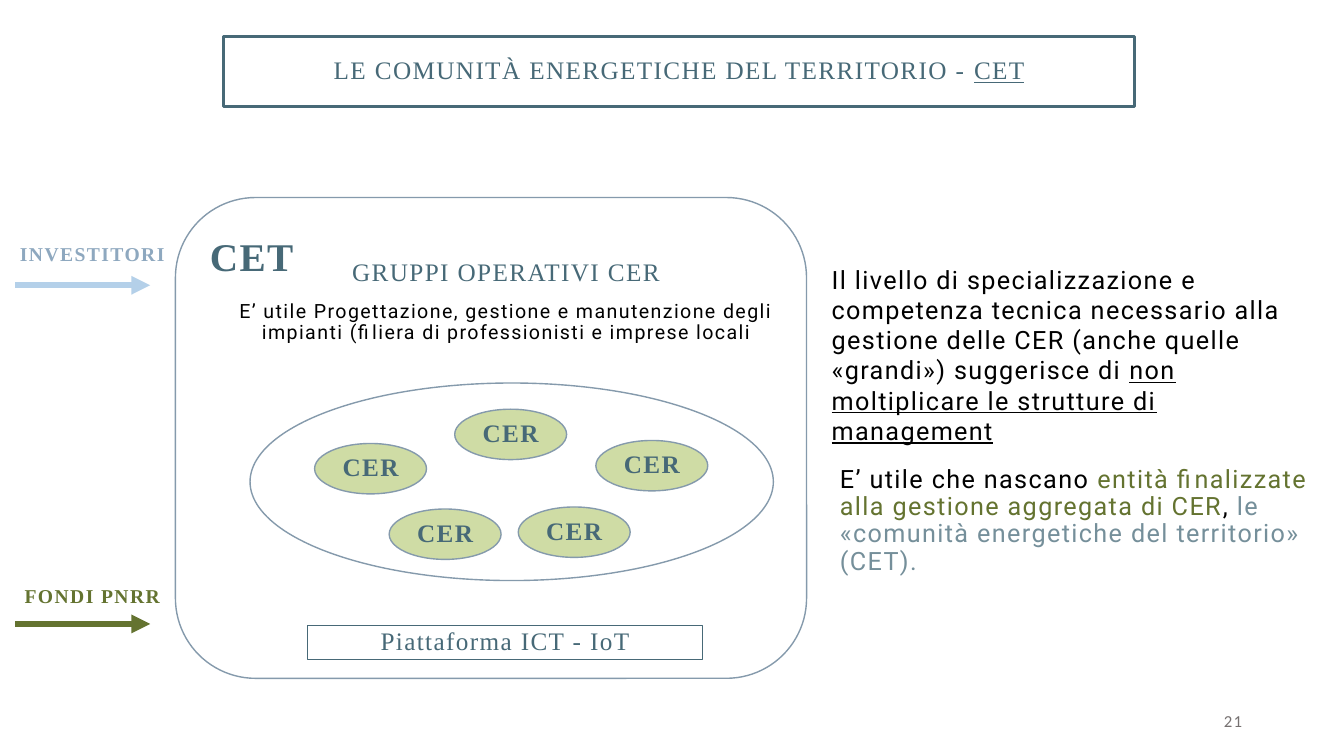
"""Build the slide on territorial energy communities (CET)."""
from lxml import etree
from pptx import Presentation
from pptx.dml.color import RGBColor
from pptx.enum import shapes as kinds, text as txt
from pptx.oxml import ns
from pptx.util import Inches, Pt

SERIF, SANS = "Times New Roman", "Roboto"
TEAL, OLIVE, BLACK, OUTLINE = "476977", "647330", "000000", "859AAC"
MIDDLE, BOTTOM, TOP = (txt.MSO_ANCHOR.MIDDLE, txt.MSO_ANCHOR.BOTTOM,
                       txt.MSO_ANCHOR.TOP)
LEFT, CENTER, RIGHT = txt.PP_ALIGN.LEFT, txt.PP_ALIGN.CENTER, txt.PP_ALIGN.RIGHT
OVAL = kinds.MSO_SHAPE.OVAL

TITLE = [("LE COMUNITÀ ENERGETICHE DEL TERRITORIO - ", TEAL, False),
         ("CET", TEAL, True)]
PROPOSAL = [("E’ utile che nascano ", BLACK, False),
            ("entità finalizzate alla gestione aggregata di CER", OLIVE, False),
            (", ", BLACK, False),
            ("le «comunità energetiche del territorio» (CET).", "758F9A", False)]
REASON = [("Il livello di specializzazione e competenza tecnica necessario alla "
           "gestione delle CER (anche quelle «grandi») suggerisce di ", BLACK, False),
          ("non moltiplicare le strutture di management", BLACK, True)]
INVESTORS = [("INVESTITORI", "8EA8BF", False)]
FUNDS = [("FONDI PNRR", OLIVE, False)]
COMMUNITY = [("CET", TEAL, False)]
GROUPS = [("GRUPPI OPERATIVI CER", TEAL, False)]
SERVICES = [("E’ utile Progettazione, gestione e manutenzione degli impianti "
             "(filiera di professionisti e imprese locali", BLACK, False)]
PLATFORM = [("Piattaforma ICT - IoT", TEAL, False)]
MEMBER = [("CER", TEAL, False)]
PAGE = [("21", "767171", False)]
FLOWS = [(2.83, "B4D0E9"), (6.19, OLIVE)]
MEMBER_SPOTS = [(5.91, 4.37), (4.51, 4.06), (3.12, 4.4), (3.86, 5.05), (5.14, 5.03)]

deck = Presentation()
deck.slide_width, deck.slide_height = Inches(13.33), Inches(7.5)
slide = deck.slides.add_slide(deck.slide_layouts[3])


def color(value):
    return RGBColor.from_string(value)


def place(holder, *box):
    holder.left, holder.top, holder.width, holder.height = map(Inches, box)
    return holder


def textbox(*box):
    return slide.shapes.add_textbox(*map(Inches, box))


def outlined(kind, box, line, weight, fill=None):
    shape = slide.shapes.add_shape(kind, *map(Inches, box))
    shape.shadow.inherit = False
    if fill:
        shape.fill.solid()
        shape.fill.fore_color.rgb = color(fill)
    else:
        shape.fill.background()
    shape.line.color.rgb = color(line)
    shape.line.width = Pt(weight)
    return shape


def write(holder, runs, size, font=SERIF, align=CENTER, anchor=MIDDLE,
          spacing=0.9, bold=False, before=0):
    frame = holder.text_frame
    frame.word_wrap = True
    frame.auto_size = txt.MSO_AUTO_SIZE.NONE
    frame.vertical_anchor = anchor
    paragraph = frame.add_paragraph() if frame.text else frame.paragraphs[0]
    paragraph.alignment = align
    paragraph.line_spacing = spacing
    paragraph.space_before = Pt(before)
    if holder.is_placeholder:
        props = paragraph._p.get_or_add_pPr()
        props.set("marL", "0")
        props.set("indent", "0")
        etree.SubElement(props, ns.qn("a:buNone"))
    for words, ink, underlined in runs:
        run = paragraph.add_run()
        run.text = words
        run.font.name, run.font.size = font, Pt(size)
        run.font.bold, run.font.underline = bold, underlined
        run.font.color.rgb = color(ink)
        run._r.get_or_add_rPr().set("spc", "100")


def arrow(y, ink):
    flow = slide.shapes.add_connector(kinds.MSO_CONNECTOR.STRAIGHT, Inches(0.15),
                                      Inches(y), Inches(1.49), Inches(y))
    flow.line.color.rgb = color(ink)
    flow.line.width = Pt(4.5)
    etree.SubElement(flow.line._get_or_add_ln(), ns.qn("a:tailEnd"), type="triangle")
    etree.SubElement(flow._element.spPr, ns.qn("a:effectLst"))


title = place(slide.shapes.title, 2.22, 0.36, 9.03, 0.7)
title.line.color.rgb = color(TEAL)
title.line.width = Pt(2.25)
write(title, TITLE, 18)
write(place(slide.placeholders[1], 8.23, 4.66, 4.99, 1.1), PROPOSAL, 18, SANS,
      LEFT, BOTTOM)
write(place(slide.placeholders[2], -0.16, 2.22, 2.15, 0.63), INVESTORS, 14, bold=True)
write(textbox(-0.16, 5.67, 2.15, 0.5), FUNDS, 14, bold=True)
write(textbox(8.15, 2.57, 4.87, 1.62), REASON, 18, SANS, LEFT, TOP, 1.0)
write(textbox(9.42, 6.95, 3, 0.4), PAGE, 12, "Calibri", RIGHT, spacing=1.0)
for flow_y, flow_ink in FLOWS:
    arrow(flow_y, flow_ink)

outlined(kinds.MSO_SHAPE.ROUNDED_RECTANGLE, (1.74, 1.96, 6.26, 4.77), OUTLINE, 1)
write(textbox(1.42, 2.25, 2.15, 0.63), COMMUNITY, 28, bold=True)
groups = textbox(2.24, 2.36, 5.56, 1.1)
write(groups, GROUPS, 18, anchor=BOTTOM)
write(groups, SERVICES, 14, SANS, anchor=BOTTOM, before=10)
write(outlined(kinds.MSO_SHAPE.RECTANGLE, (3.05, 6.21, 3.92, 0.33), TEAL, 0.75),
      PLATFORM, 18)

outlined(OVAL, (2.48, 3.8, 5.19, 1.96), OUTLINE, 1)
for left, top in MEMBER_SPOTS:
    member = outlined(OVAL, (left, top, 1.11, 0.5), OUTLINE, 1, "CFDCA5")
    inside = member.text_frame
    inside.margin_left = inside.margin_right = 0
    inside.margin_top = inside.margin_bottom = 0
    write(member, MEMBER, 18, bold=True)

deck.save("out.pptx")
